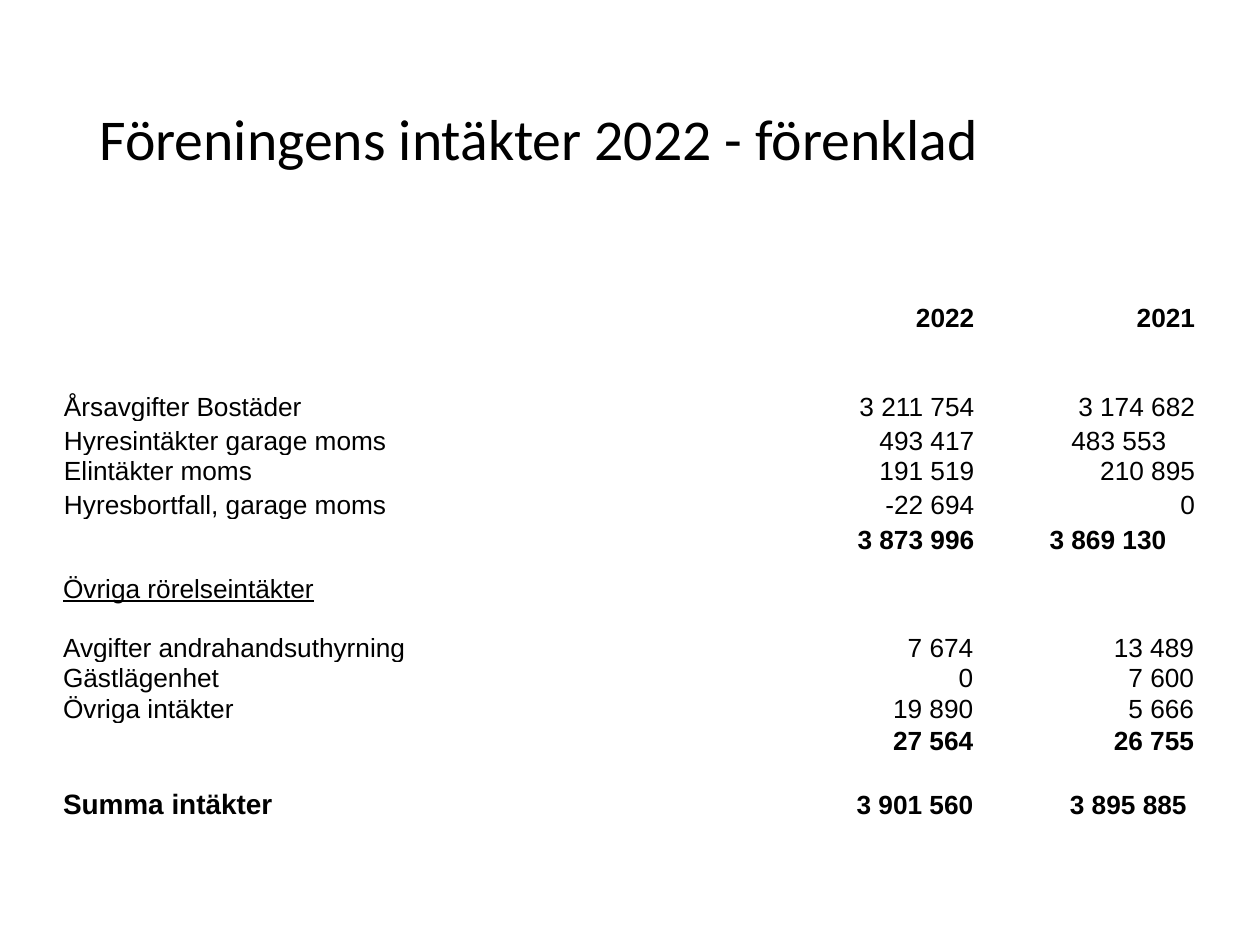
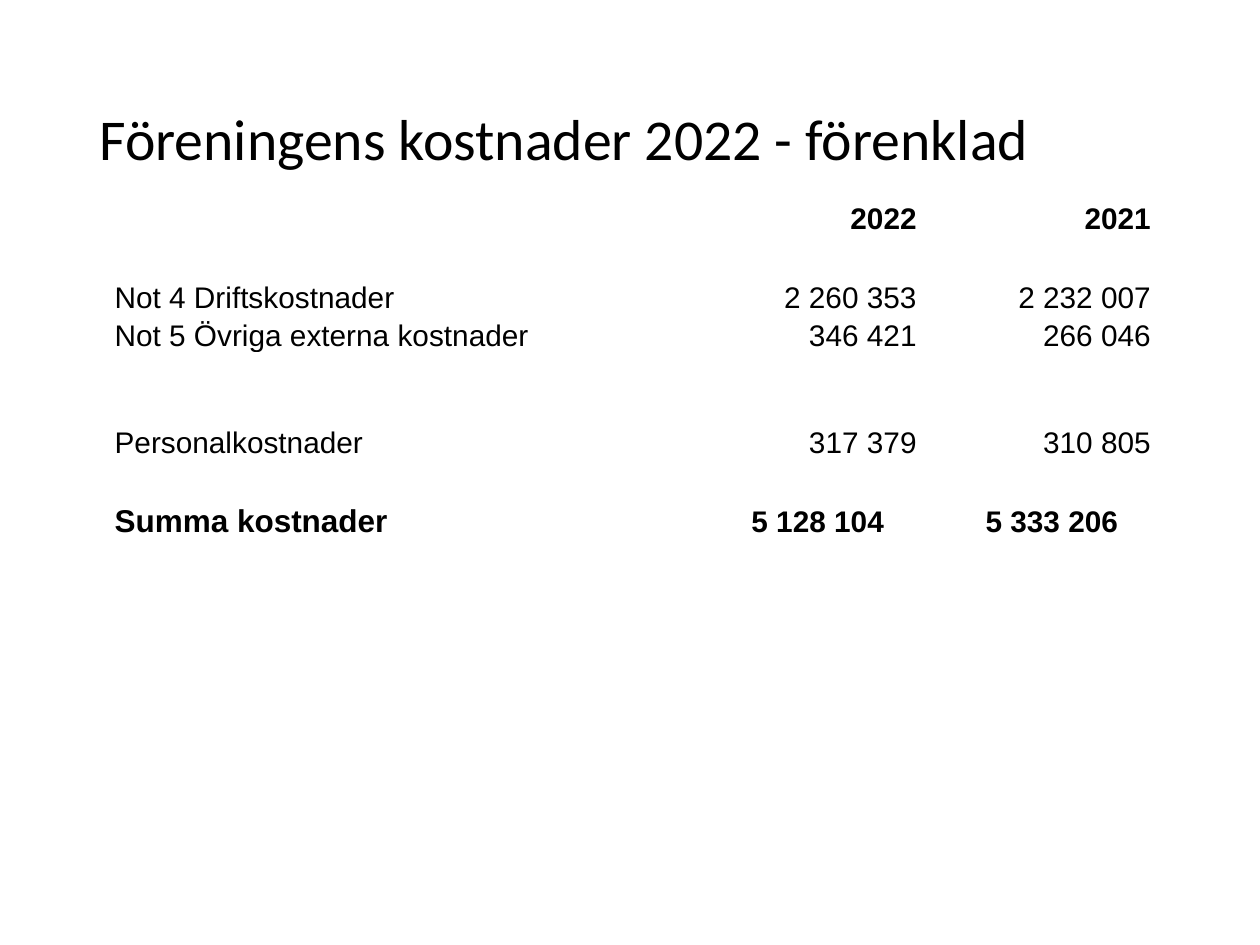
from dataclasses import dataclass

from lxml import etree
from pptx import Presentation
from pptx.dml.color import RGBColor
from pptx.enum.text import MSO_ANCHOR, MSO_AUTO_SIZE, PP_ALIGN
from pptx.oxml.ns import qn
from pptx.util import Cm, Pt

LEFT, RIGHT = PP_ALIGN.LEFT, PP_ALIGN.RIGHT
MIDDLE, BOTTOM = MSO_ANCHOR.MIDDLE, MSO_ANCHOR.BOTTOM
NO_AUTOFIT = MSO_AUTO_SIZE.NONE

# Shared look, lengths in cm and text sizes in points
BLACK = "000000"
TITLE_BOX = (1.75, 1.02, 21.9, 3.68)
TITLE_FONT, TITLE_SIZE = "Calibri", 33
TABLE_FONT = "Arial"
INSET = 0.03
TITLE_ONLY = 5


@dataclass
class Row:
    height: float
    label: str = ""
    values: tuple = ("", "")
    bold: bool = False
    inset_2022: float = INSET
    inset_2021: float = INSET
    span: int = 1          # rows covered by the label
    heading: str = ""      # underlined line above the label


@dataclass
class Statement:
    left: float
    top: float
    columns: tuple
    size: int
    rows: list


@dataclass
class Page:
    title: str
    statements: list


INCOME_COLUMNS = (9.93, 8.48, 4.45)
YEARS = ("2022", "2021")

PAGES = [
    Page("Föreningens intäkter 2022 - förenklad", [
        Statement(1.26, 6, INCOME_COLUMNS, 15, [
            Row(0.71, values=YEARS, bold=True),
            Row(0.69),
            Row(0.41, "Årsavgifter Bostäder", span=2),
            Row(0.69, values=("3 211 754", "3 174 682")),
            Row(0.69, "Hyresintäkter garage moms", ("493 417", "483 553"), inset_2021=0.61),
            Row(0.61, "Elintäkter moms", ("191 519", "210 895")),
            Row(0.69, "Hyresbortfall, garage moms", ("-22 694", "0")),
            Row(0.71, values=("3 873 996", "3 869 130"), bold=True, inset_2021=0.61),
        ]),
        Statement(1.24, 11.18, INCOME_COLUMNS, 15, [
            Row(0.4, "Avgifter andrahandsuthyrning", span=2, heading="Övriga rörelseintäkter"),
            Row(1.78, values=("7 674", "13 489")),
            Row(0.61, "Gästlägenhet", ("0", "7 600")),
            Row(0.61, "Övriga intäkter", ("19 890", "5 666")),
            Row(0.66, values=("27 564", "26 755"), bold=True),
            Row(0.63),
            Row(0.66, "Summa intäkter", ("3 901 560", "3 895 885"), bold=True, inset_2021=0.18),
        ]),
    ]),
    Page("Föreningens kostnader 2022 - förenklad", [
        Statement(2.28, 3.94, (11.3, 4.93, 4.72), 17, [
            Row(0.82, values=YEARS, bold=True),
            Row(0.83),
            Row(0.76, "Not 4 Driftskostnader", ("2 260 353", "2 232 007")),
            Row(0.76, "Not 5 Övriga externa kostnader", ("346 421", "266 046")),
            Row(0.71),
            Row(0.69),
            Row(0.76, "Personalkostnader", ("317 379", "310 805")),
            Row(0.81),
            Row(0.79, "Summa kostnader", ("5 128 104", "5 333 206"), bold=True,
                inset_2022=0.69, inset_2021=0.69),
            Row(0.81),
            Row(0.81),
        ]),
    ]),
]


def rgb(color: str) -> RGBColor:
    return RGBColor.from_string(color)


def apply(target, formats: dict) -> None:
    for name, value in formats.items():
        setattr(target, name, value)


def write(p, text: str, font: str, size: float, align=LEFT, **formats) -> None:
    p.alignment = align
    r = p.add_run()
    r.text = text
    apply(r.font, {"name": font, "size": Pt(size), **formats})
    r.font.color.rgb = rgb(BLACK)


def add_title(slide, text: str) -> None:
    sp = slide.shapes.title
    left, top, width, height = (Cm(v) for v in TITLE_BOX)
    apply(sp, {"left": left, "top": top, "width": width, "height": height})
    tf = sp.text_frame
    apply(tf, {"auto_size": NO_AUTOFIT, "vertical_anchor": MIDDLE, "word_wrap": True})
    p = tf.paragraphs[0]
    p.line_spacing = 0.9
    write(p, text, TITLE_FONT, TITLE_SIZE)


def format_cell(cell, right_inset: float = INSET) -> None:
    cell.fill.background()
    apply(cell, {"margin_left": Cm(INSET), "margin_right": Cm(right_inset),
                 "margin_top": 0, "margin_bottom": 0, "vertical_anchor": BOTTOM})


def shrink_empty(cell) -> None:
    """Keep an empty cell from stretching its row."""
    etree.SubElement(cell.text_frame.paragraphs[0]._p, qn("a:endParaRPr"), sz="800")


def fill_label(cell, row: Row, size: int) -> None:
    tf = cell.text_frame
    p = tf.paragraphs[0]
    if row.heading:
        write(p, row.heading, TABLE_FONT, size, underline=True)
        p = tf.add_paragraph()
        p.space_before = Pt(size * 1.15)
    # Bold labels are totals, one point larger than the figures
    write(p, row.label, TABLE_FONT, size + row.bold, bold=row.bold)


def add_statement(slide, st: Statement) -> None:
    heights = [row.height for row in st.rows]
    frame = slide.shapes.add_table(len(st.rows), len(st.columns), Cm(st.left), Cm(st.top),
                                   Cm(sum(st.columns)), Cm(sum(heights)))
    table = frame.table
    apply(table, {"first_row": False, "horz_banding": False})
    for column, width in zip(table.columns, st.columns):
        column.width = Cm(width)

    for i, row in enumerate(st.rows):
        table.rows[i].height = Cm(row.height)
        label, *figures = table.rows[i].cells
        format_cell(label)
        if row.label:
            fill_label(label, row, st.size)
        else:
            shrink_empty(label)
        for cell, value, inset in zip(figures, row.values, (row.inset_2022, row.inset_2021)):
            format_cell(cell, inset)
            if value:
                write(cell.text_frame.paragraphs[0], value, TABLE_FONT, st.size, RIGHT,
                      bold=row.bold)
            else:
                shrink_empty(cell)

    # Labels that cover two rows
    for i, row in enumerate(st.rows):
        if row.span > 1:
            table.cell(i, 0).merge(table.cell(i + row.span - 1, 0))


def main() -> None:
    prs = Presentation()
    apply(prs, {"slide_width": Cm(25.4), "slide_height": Cm(19.05)})
    for page in PAGES:
        slide = prs.slides.add_slide(prs.slide_layouts[TITLE_ONLY])
        add_title(slide, page.title)
        for statement in page.statements:
            add_statement(slide, statement)
    prs.save("out.pptx")


if __name__ == "__main__":
    main()
